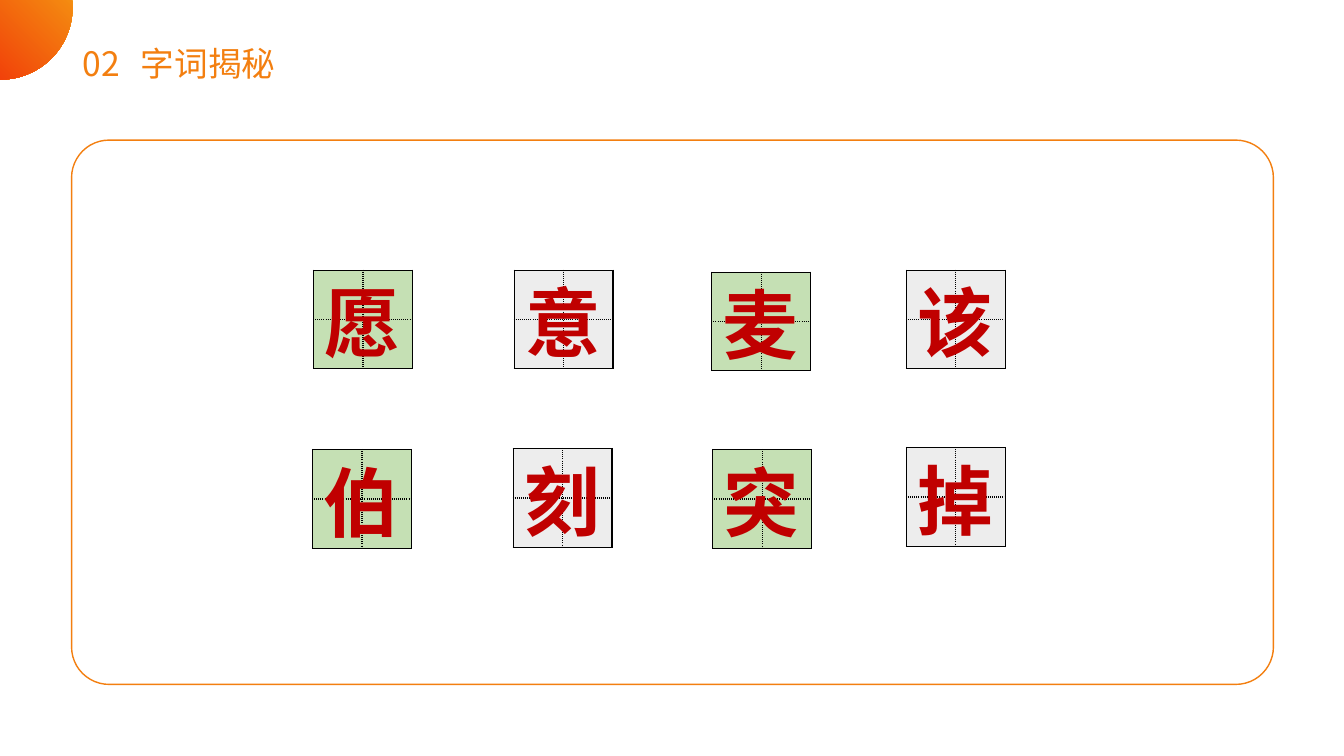
from lxml import etree
from pptx import Presentation
from pptx.dml.color import RGBColor
from pptx.enum.shapes import MSO_SHAPE
from pptx.enum.text import MSO_AUTO_SIZE
from pptx.oxml.ns import qn
from pptx.util import Inches, Pt

ELLIPSE = MSO_SHAPE.OVAL
ROUNDED = MSO_SHAPE.ROUNDED_RECTANGLE
GROW = MSO_AUTO_SIZE.SHAPE_TO_FIT_TEXT

FONT = "Noto Sans CJK SC"
ORANGE = RGBColor(0xF3, 0x7F, 0x10)
YELLOW = RGBColor(0xF5, 0xAD, 0x14)
FLAME = RGBColor(0xF0, 0x1D, 0x06)
RED = RGBColor(0xC0, 0x00, 0x00)
GREEN = RGBColor(0xC5, 0xE0, 0xB4)
GREY = RGBColor(0xED, 0xED, 0xED)
WHITE = RGBColor(0xFF, 0xFF, 0xFF)
BLACK = RGBColor(0x00, 0x00, 0x00)

HALF = 0.49  # half the side of a writing square
SQUARES = [  # character, left, top, fill
    ("愿", 3.11, 2.68, GREEN), ("意", 5.10, 2.68, GREY),
    ("麦", 7.06, 2.70, GREEN), ("该", 8.99, 2.68, GREY),
    ("伯", 3.10, 4.46, GREEN), ("刻", 5.09, 4.45, GREY),
    ("突", 7.07, 4.46, GREEN), ("掉", 8.99, 4.44, GREY),
]


def add_line(parent, tag, points, color, dash="solid"):
    """Add a line element to cell or run properties."""
    line = etree.SubElement(parent, qn(tag), w=str(Pt(points)))
    fill = etree.SubElement(line, qn("a:solidFill"))
    etree.SubElement(fill, qn("a:srgbClr"), val=str(color))
    etree.SubElement(line, qn("a:prstDash"), val=dash)
    return line


def add_text(page, text, place, formats):
    box = page.shapes.add_textbox(*[Inches(value) for value in place])
    para = box.text_frame.paragraphs[0]
    span = para.add_run()
    span.text = text
    span.font.color.rgb = formats.pop("color")
    for name, value in formats.items():
        setattr(span.font, name, value)
    etree.SubElement(span.font._element, qn("a:ea"), typeface=FONT)
    return box, para, span


deck = Presentation()
deck.slide_width, deck.slide_height = Inches(13.33), Inches(7.5)
page = deck.slides.add_slide(deck.slide_layouts[6])

# Corner circle, yellow at top right to red at bottom left
circle = page.shapes.add_shape(
    ELLIPSE, Inches(-0.71), Inches(-0.64), Inches(1.43), Inches(1.43))
circle.shadow.inherit = False
circle.line.fill.background()
circle.fill.gradient()
circle.fill.gradient_angle = 225
for stop, color in zip(circle.fill.gradient_stops, (YELLOW, FLAME)):
    stop.color.rgb = color

# Rounded frame
frame = page.shapes.add_shape(
    ROUNDED, Inches(0.71), Inches(1.39), Inches(11.92), Inches(5.4))
frame.adjustments[0] = 0.069
frame.shadow.inherit = False
frame.fill.background()
frame.line.color.rgb = ORANGE
frame.line.width = Pt(1)

# Writing squares: solid outside, dotted inside
for character, left, top, color in SQUARES:
    table = page.shapes.add_table(
        2, 2, Inches(left), Inches(top), Inches(2 * HALF), Inches(2 * HALF)).table
    table.first_row = table.horz_banding = False
    for row in range(2):
        for column in range(2):
            cell = table.cell(row, column)
            for side in ("left", "right", "top", "bottom"):
                setattr(cell, "margin_" + side, 0)
            properties = cell._tc.get_or_add_tcPr()
            inner = {"a:lnL": column == 1, "a:lnR": column == 0,
                     "a:lnT": row == 1, "a:lnB": row == 0}
            for tag, dotted in inner.items():
                add_line(properties, tag, 1, BLACK, "sysDot" if dotted else "solid")
            cell.fill.solid()
            cell.fill.fore_color.rgb = color

# Characters
for character, left, top, color in SQUARES:
    box, para, span = add_text(
        page, character, (left + 0.01, top + 0.01, 0.95, 1.01),
        {"name": FONT, "size": Pt(54), "bold": True, "color": RED})
    box.text_frame.word_wrap = False
    box.text_frame.auto_size = GROW
    run_properties = span.font._element
    run_properties.insert(0, add_line(run_properties, "a:ln", 0.75, WHITE))

# Heading, with a tab stop between number and title
box, para, span = add_text(
    page, "02\t字词揭秘", (0.72, 0.42, 3.47, 0.44),
    {"name": FONT, "size": Pt(24), "color": ORANGE})
box.text_frame.word_wrap = True
para.line_spacing = 0.9
para.space_before = Pt(10)
tabs = etree.SubElement(para._p.get_or_add_pPr(), qn("a:tabLst"))
etree.SubElement(tabs, qn("a:tab"), pos=str(Inches(0.58)), algn="l")

deck.save("out.pptx")
